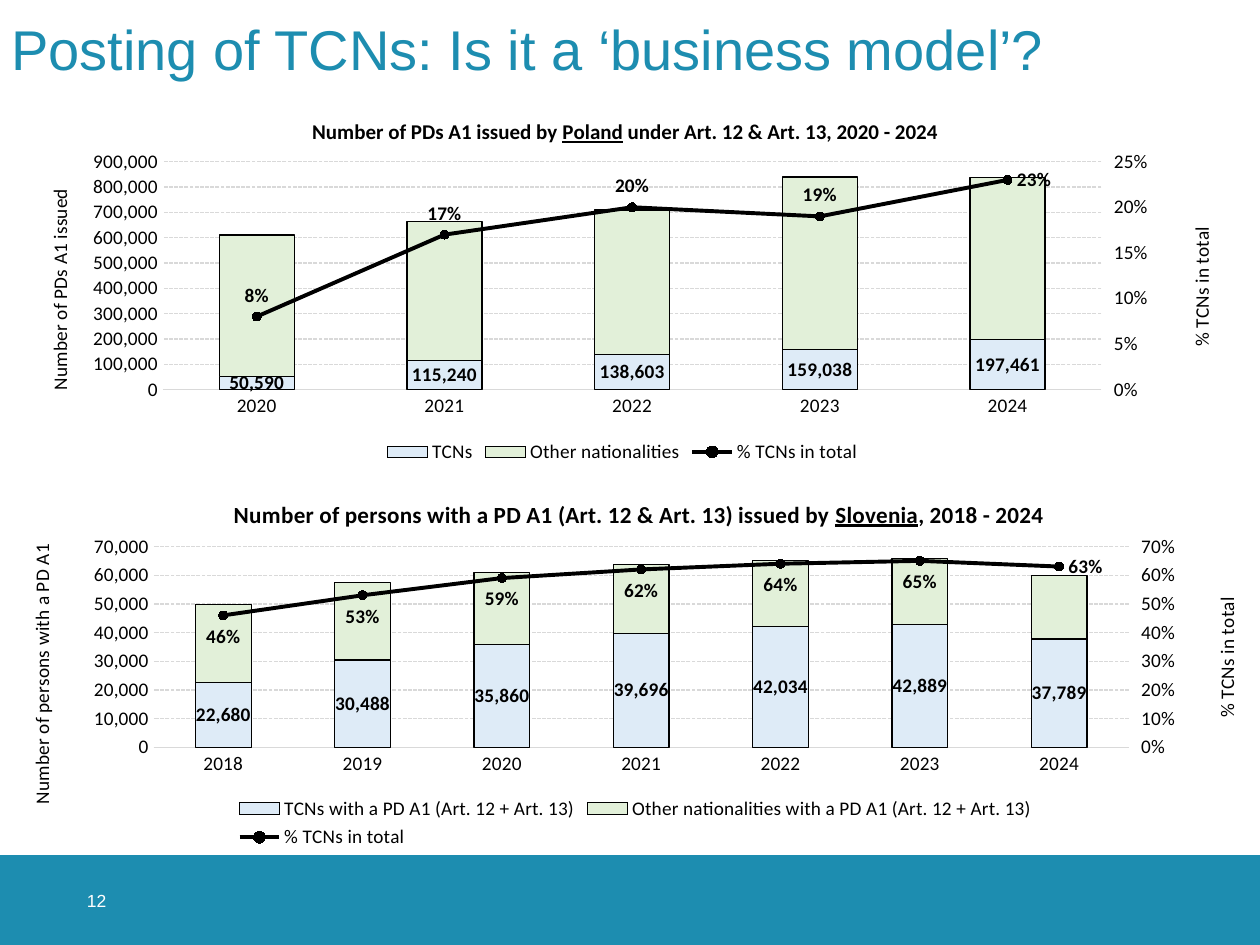
from dataclasses import dataclass

import pptx
import pptx.chart.axis
import pptx.chart.data
import pptx.dml.color
import pptx.enum.chart
import pptx.enum.dml
import pptx.enum.shapes
import pptx.enum.text
import pptx.oxml
import pptx.oxml.ns
import pptx.util

qn = pptx.oxml.ns.qn
Pt = pptx.util.Pt
NAMESPACES = pptx.oxml.ns.nsdecls("c", "a")
WIDTH, HEIGHT = pptx.util.Inches(10), pptx.util.Inches(7.5)


@dataclass(frozen=True)
class Theme:
    brand: str = "1D8DB0"
    paper: str = "FFFFFF"
    ink: str = "000000"
    grid: str = "D9D9D9"
    tcn: str = "DEEBF7"
    other: str = "E2F0D9"
    heading_font: str = "Arial"
    chart_font: str = "Calibri"
    heading: float = 32
    page: float = 10
    label: float = 11


THEME = Theme()

POLAND = dict(
    title=("Number of PDs A1 issued by ", "Poland", " under Art. 12 & Art. 13, 2020 - 2024"),
    title_size=12, title_at=(0.243, 0.06), plot_at=(0.124, 0.188, 0.768, 0.603),
    left_title="Number of PDs A1 issued", left_at=(0.026, 0.25), left_scale=(900000, 100000),
    right_at=(0.96, 0.35), right_scale=(0.25, 0.05), share_labels="ABOVE",
    years=range(2020, 2025),
    names=("TCNs", "Other nationalities"),
    tcns=(50590, 115240, 138603, 159038, 197461),
    others=(560000, 550000, 570000, 680000, 640000),
    shares=(0.08, 0.17, 0.20, 0.19, 0.23),
)
SLOVENIA = dict(
    title=("Number of persons with a PD A1 (Art. 12 & Art. 13) issued by ", "Slovenia", ", 2018 - 2024"),
    title_size=13.2, title_at=(0.175, 0.06), plot_at=(0.114, 0.196, 0.781, 0.525),
    left_title="Number of persons with a PD A1", left_at=(0.011, 0.18), left_scale=(70000, 10000),
    right_at=(0.96, 0.32), right_scale=(0.7, 0.1), share_labels="BELOW",
    years=range(2018, 2025),
    names=("TCNs with a PD A1 (Art. 12 + Art. 13)",
           "Other nationalities with a PD A1 (Art. 12 + Art. 13)"),
    tcns=(22680, 30488, 35860, 39696, 42034, 42889, 37789),
    others=(27000, 27000, 25000, 24000, 23000, 23000, 22000),
    shares=(0.46, 0.53, 0.59, 0.62, 0.64, 0.65, 0.63),
)


def rgb(color):
    return pptx.dml.color.RGBColor.from_string(color)


def box_on_slide(left, top, width, height):
    """Turn shares of the slide into lengths."""
    return [round(share * side) for share, side in
            zip((left, top, width, height), (WIDTH, HEIGHT, WIDTH, HEIGHT))]


def style(font, size, color=THEME.ink, name=THEME.chart_font, bold=False):
    font.size, font.name, font.bold = Pt(size), name, bold
    font.color.rgb = rgb(color)


def outline(line, color, width):
    line.color.rgb = rgb(color)
    line.width = Pt(width)


def set_layout(part, at):
    """Fix a chart part at shares (x, y[, w, h]) of the chart."""
    for old in part.findall(qn("c:layout")):
        part.remove(old)
    target = '<c:layoutTarget val="inner"/>' if len(at) == 4 else ""
    modes = '<c:xMode val="edge"/><c:yMode val="edge"/>'
    shares = "".join(f'<c:{key} val="{share}"/>' for key, share in zip("xywh", at))
    layout = pptx.oxml.parse_xml(
        f"<c:layout {NAMESPACES}><c:manualLayout>{target}{modes}{shares}</c:manualLayout></c:layout>")
    part.insert(1 if part.find(qn("c:tx")) is not None else 0, layout)


def format_value_axis(axis, title, at, scale, number_format):
    axis.minimum_scale = 0
    axis.maximum_scale, axis.major_unit = scale
    axis.tick_labels.number_format = number_format
    axis.tick_labels.number_format_is_linked = False
    style(axis.tick_labels.font, THEME.label)
    axis.format.line.fill.background()
    frame = axis.axis_title.text_frame
    frame.text = title
    style(frame.paragraphs[0].runs[0].font, THEME.label)
    title_part = axis.axis_title._element
    body = title_part.find(".//" + qn("a:bodyPr"))
    body.set("rot", "-5400000")
    body.set("vert", "horz")
    set_layout(title_part, at)


def move_share_to_right_axis(chart):
    """Turn the last column series into a line; return its value axis."""
    area = chart.element.find(".//" + qn("c:plotArea"))
    columns = area.find(qn("c:barChart"))
    share = columns.findall(qn("c:ser"))[-1]
    for column_only in share.findall(qn("c:invertIfNegative")):
        share.remove(column_only)
    line = pptx.oxml.parse_xml(
        f'<c:lineChart {NAMESPACES}><c:grouping val="standard"/><c:varyColors val="0"/>'
        '<c:marker val="1"/><c:axId val="5001"/><c:axId val="5002"/></c:lineChart>')
    line.insert(2, share)
    columns.addnext(line)

    def axis_xml(kind, own, other, hidden, side, ending):
        return pptx.oxml.parse_xml(
            f'<c:{kind} {NAMESPACES}><c:axId val="{own}"/>'
            f'<c:scaling><c:orientation val="minMax"/></c:scaling><c:delete val="{hidden}"/>'
            f'<c:axPos val="{side}"/><c:majorTickMark val="out"/><c:minorTickMark val="none"/>'
            f'<c:tickLblPos val="nextTo"/><c:crossAx val="{other}"/>{ending}</c:{kind}>')

    right = axis_xml("valAx", 5002, 5001, 0, "r",
                     '<c:crosses val="max"/><c:crossBetween val="between"/>')
    hidden = axis_xml("catAx", 5001, 5002, 1, "b", '<c:crosses val="autoZero"/>')
    area.find(qn("c:valAx")).addnext(right)
    right.addnext(hidden)
    return pptx.chart.axis.ValueAxis(right)


def label_values(series, number_format, position):
    labels = series.data_labels
    labels.show_value = True
    labels.number_format, labels.number_format_is_linked = number_format, False
    labels.position = position
    style(labels.font, THEME.label, bold=True)


def add_country_chart(slide, box, country):
    enums = pptx.enum.chart
    data = pptx.chart.data.CategoryChartData(number_format="#,##0")
    data.categories = [str(year) for year in country["years"]]
    for name, values in zip(country["names"], (country["tcns"], country["others"])):
        data.add_series(name, values)
    data.add_series("% TCNs in total", country["shares"], "0%")
    chart = slide.shapes.add_chart(enums.XL_CHART_TYPE.COLUMN_STACKED, *box, data).chart
    style(chart.font, THEME.label)

    heading = chart.chart_title.text_frame.paragraphs[0]
    for text in country["title"]:
        run = heading.add_run()
        run.text = text
        style(run.font, country["title_size"], bold=True)
    heading.runs[1].font.underline = True
    set_layout(chart.chart_title._element, country["title_at"])
    set_layout(chart.element.find(".//" + qn("c:plotArea")), country["plot_at"])

    chart.has_legend = True
    chart.legend.position = enums.XL_LEGEND_POSITION.BOTTOM
    chart.legend.include_in_layout = False
    style(chart.legend.font, THEME.label)

    years, counts = chart.category_axis, chart.value_axis
    years.major_tick_mark = counts.major_tick_mark = enums.XL_TICK_MARK.NONE
    style(years.tick_labels.font, THEME.label)
    outline(years.format.line, THEME.grid, 0.75)
    grid = counts.major_gridlines.format.line
    outline(grid, THEME.grid, 0.75)
    grid.dash_style = pptx.enum.dml.MSO_LINE.SQUARE_DOT
    format_value_axis(counts, country["left_title"], country["left_at"],
                      country["left_scale"], "#,##0")
    format_value_axis(move_share_to_right_axis(chart), "% TCNs in total",
                      country["right_at"], country["right_scale"], "0%")

    columns, line = chart.plots
    columns.vary_by_categories = False
    columns.gap_width, columns.overlap = 150, 100
    for series, color in zip(columns.series, (THEME.tcn, THEME.other)):
        series.format.fill.solid()
        series.format.fill.fore_color.rgb = rgb(color)
        outline(series.format.line, THEME.ink, 0.75)
    places = enums.XL_LABEL_POSITION
    label_values(columns.series[0], "#,##0", places.CENTER)

    share = line.series[0]
    share.smooth = False
    outline(share.format.line, THEME.ink, 2.25)
    share.marker.style, share.marker.size = enums.XL_MARKER_STYLE.CIRCLE, 5
    share.marker.format.fill.solid()
    share.marker.format.fill.fore_color.rgb = rgb(THEME.ink)
    outline(share.marker.format.line, THEME.ink, 0.75)
    label_values(share, "0%", places[country["share_labels"]])
    last_label = share.points[len(country["shares"]) - 1].data_label
    style(last_label.font, THEME.label, bold=True)
    last_label.position = places.RIGHT


def fill_text(shape, text, size, color, anchor):
    frame = shape.text_frame
    frame.text = text
    frame.word_wrap = True
    frame.auto_size = pptx.enum.text.MSO_AUTO_SIZE.NONE
    frame.margin_left = frame.margin_right = frame.margin_top = frame.margin_bottom = 0
    frame.vertical_anchor = anchor
    paragraph = frame.paragraphs[0]
    paragraph.alignment = pptx.enum.text.PP_ALIGN.LEFT
    style(paragraph.runs[0].font, size, color, THEME.heading_font)
    return paragraph


def add_heading(slide, box, text):
    title = slide.shapes.title
    title.left, title.top, title.width, title.height = box
    fill_text(title, text, THEME.heading, THEME.brand,
              pptx.enum.text.MSO_ANCHOR.TOP).line_spacing = 0.9


def add_footer(slide, box, page):
    left, top, width, height = box
    band = slide.shapes.add_shape(pptx.enum.shapes.MSO_SHAPE.RECTANGLE, *box)
    band.shadow.inherit = False
    band.fill.solid()
    band.fill.fore_color.rgb = rgb(THEME.brand)
    band.line.fill.background()
    number = slide.shapes.add_textbox(left + round(width * 0.069), top, height, height)
    fill_text(number, page, THEME.page, THEME.paper, pptx.enum.text.MSO_ANCHOR.MIDDLE)


def main():
    deck = pptx.Presentation()
    deck.slide_width, deck.slide_height = WIDTH, HEIGHT
    slide = deck.slides.add_slide(deck.slide_layouts.get_by_name("Title Only"))
    add_footer(slide, box_on_slide(0, 0.905, 1, 0.095), "12")
    add_heading(slide, box_on_slide(0.009, 0.023, 0.908, 0.095),
                "Posting of TCNs: Is it a ‘business model’?")
    add_country_chart(slide, box_on_slide(0.009, 0.096, 0.97, 0.4), POLAND)
    add_country_chart(slide, box_on_slide(0.009, 0.499, 0.991, 0.405), SLOVENIA)
    deck.save("out.pptx")


if __name__ == "__main__":
    main()
